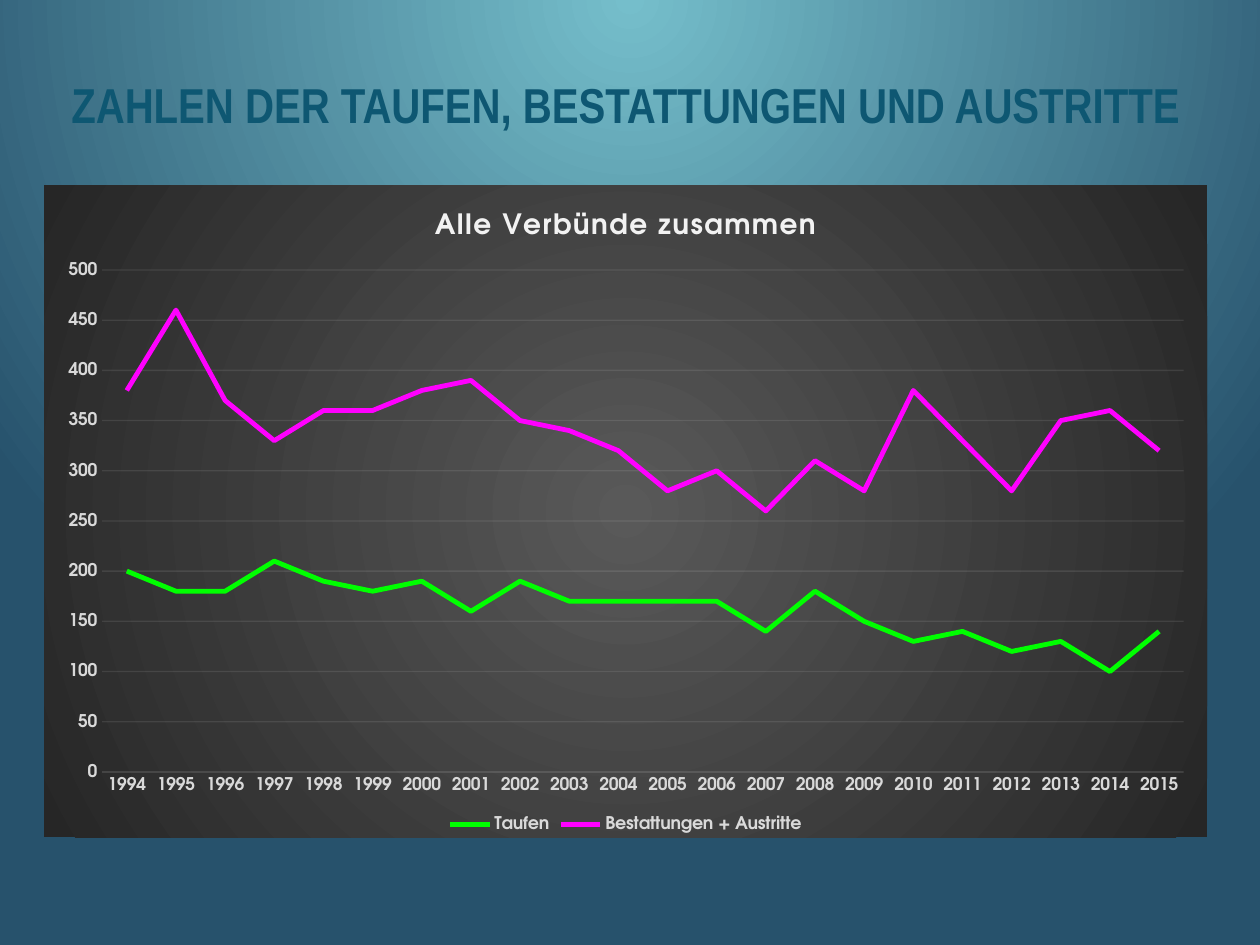
from dataclasses import dataclass

from pptx import Presentation
from pptx.chart.data import CategoryChartData
from pptx.dml.color import RGBColor as RGB
from pptx.enum.chart import XL_CHART_TYPE as ChartType
from pptx.enum.chart import XL_LEGEND_POSITION as LegendPos
from pptx.enum.chart import XL_MARKER_STYLE as Marker
from pptx.enum.chart import XL_TICK_MARK as Tick
from pptx.enum.text import MSO_ANCHOR as Anchor
from pptx.enum.text import PP_ALIGN as Align
from pptx.oxml import parse_xml
from pptx.oxml.ns import nsdecls, qn
from pptx.util import Inches, Pt

W, H = Inches(10), Inches(7.5)
LEFT, WIDTH = 0.035, 0.923
HEADING, BODY = "Arial Narrow", "TeX Gyre Adventor"
COLORS = {
    "sky": "75BECB", "deep": "27526C", "heading": "0E5772",
    "panel": "595959", "edge": "262626", "grid": "F2F2F2", "label": "D9D9D9",
    "white": "FFFFFF", "baptisms": "00FF00", "departures": "FF00FF",
}


@dataclass
class Series:
    name: str
    color: str
    values: tuple[int, ...]


YEARS = [str(year) for year in range(1994, 2016)]
SERIES = [
    Series("Taufen", "baptisms",
           (200, 180, 180, 210, 190, 180, 190, 160, 190, 170, 170,
            170, 170, 140, 180, 150, 130, 140, 120, 130, 100, 140)),
    Series("Bestattungen + Austritte", "departures",
           (380, 460, 370, 330, 360, 360, 380, 390, 350, 340, 320,
            280, 300, 260, 310, 280, 380, 330, 280, 350, 360, 320)),
]


def rgb(name: str) -> RGB:
    return RGB.from_string(COLORS[name])


def set_font(font, face: str, size: float, color: str, bold: bool = False) -> None:
    font.name, font.size, font.bold = face, Pt(size), bold
    font.color.rgb = rgb(color)


def write(tf, text: str, *, face: str, size: float, color: str,
          bold: bool = True, spacing: int = 0) -> None:
    p = tf.paragraphs[0]
    p.alignment = Align.CENTER
    r = p.add_run()
    r.text = text
    set_font(r.font, face, size, color, bold)
    if spacing:
        r.font._element.set("spc", str(spacing))


def radial(inner: str, outer: str, l: int, t: int, r: int, b: int):
    return parse_xml(
        f'<a:gradFill {nsdecls("a")} rotWithShape="1"><a:gsLst>'
        f'<a:gs pos="0"><a:srgbClr val="{COLORS[inner]}"/></a:gs>'
        f'<a:gs pos="100000"><a:srgbClr val="{COLORS[outer]}"/></a:gs></a:gsLst>'
        f'<a:path path="circle"><a:fillToRect l="{l * 1000}" t="{t * 1000}" '
        f'r="{r * 1000}" b="{b * 1000}"/></a:path></a:gradFill>')


def faint_line(line) -> None:
    line.width = Pt(0.75)
    line.color.rgb = rgb("grid")
    color = line._get_or_add_ln().find(".//" + qn("a:srgbClr"))
    color.append(parse_xml(f'<a:alpha {nsdecls("a")} val="10000"/>'))


def place_plot(chart, **shares: float) -> None:
    plot_area = chart._chartSpace.find(".//" + qn("c:plotArea"))
    for old in plot_area.findall(qn("c:layout")):
        plot_area.remove(old)
    sizes = "".join(f'<c:{k} val="{v}"/>' for k, v in shares.items())
    plot_area.insert(0, parse_xml(
        f'<c:layout {nsdecls("c")}><c:manualLayout><c:layoutTarget val="inner"/>'
        f'<c:xMode val="edge"/><c:yMode val="edge"/>{sizes}'
        '</c:manualLayout></c:layout>'))


def fill_panel(chart) -> None:
    sp_pr = parse_xml(f'<c:spPr {nsdecls("c", "a")}><a:ln><a:noFill/></a:ln></c:spPr>')
    sp_pr.insert(0, radial("panel", "edge", 50, 50, 50, 50))
    chart._chartSpace.find(qn("c:chart")).addnext(sp_pr)


def add_heading(s) -> None:
    tf = s.shapes.add_textbox(
        int(W * LEFT), int(H * 0.035), int(W * WIDTH), int(H * 0.15)).text_frame
    tf.word_wrap = True
    tf.vertical_anchor = Anchor.MIDDLE
    write(tf, "ZAHLEN DER TAUFEN, BESTATTUNGEN UND AUSTRITTE",
          face=HEADING, size=28, color="heading")


def add_line_chart(s) -> None:
    data = CategoryChartData()
    data.categories = YEARS
    for item in SERIES:
        data.add_series(item.name, item.values)
    chart = s.shapes.add_chart(
        ChartType.LINE, int(W * LEFT), int(H * 0.196),
        int(W * WIDTH), int(H * 0.69), data).chart
    set_font(chart.font, BODY, 10, "white")
    chart.has_title = True
    write(chart.chart_title.text_frame, "Alle Verbünde zusammen",
          face=BODY, size=16, color="grid", spacing=100)
    chart.chart_title.include_in_layout = False

    chart.has_legend = True
    chart.legend.position = LegendPos.BOTTOM
    chart.legend.include_in_layout = False
    set_font(chart.legend.font, BODY, 10, "label", True)

    years, counts = chart.category_axis, chart.value_axis
    for axis in (years, counts):
        axis.major_tick_mark = axis.minor_tick_mark = Tick.NONE
        set_font(axis.tick_labels.font, BODY, 10, "label", True)
    faint_line(years.format.line)
    counts.format.line.fill.background()
    counts.minimum_scale, counts.maximum_scale, counts.major_unit = 0, 500, 50
    faint_line(counts.major_gridlines.format.line)

    chart.plots[0].vary_by_categories = False
    for series, item in zip(chart.plots[0].series, SERIES):
        series.smooth = False
        series.marker.style = Marker.NONE
        series.format.line.width = Pt(2.75)
        series.format.line.color.rgb = rgb(item.color)
    place_plot(chart, x=0.05, y=0.13, w=0.93, h=0.77)
    fill_panel(chart)


def main() -> None:
    """Build the slide with the line chart of baptisms, funerals and departures."""
    prs = Presentation()
    prs.slide_width, prs.slide_height = W, H
    s = prs.slides.add_slide(prs.slide_layouts[6])
    s.background.fill.solid()
    bg = s._element.find(".//" + qn("p:bgPr"))
    bg.replace(bg[0], radial("sky", "deep", 0, 0, 0, 100))
    add_heading(s)
    add_line_chart(s)
    prs.save("out.pptx")


if __name__ == "__main__":
    main()
